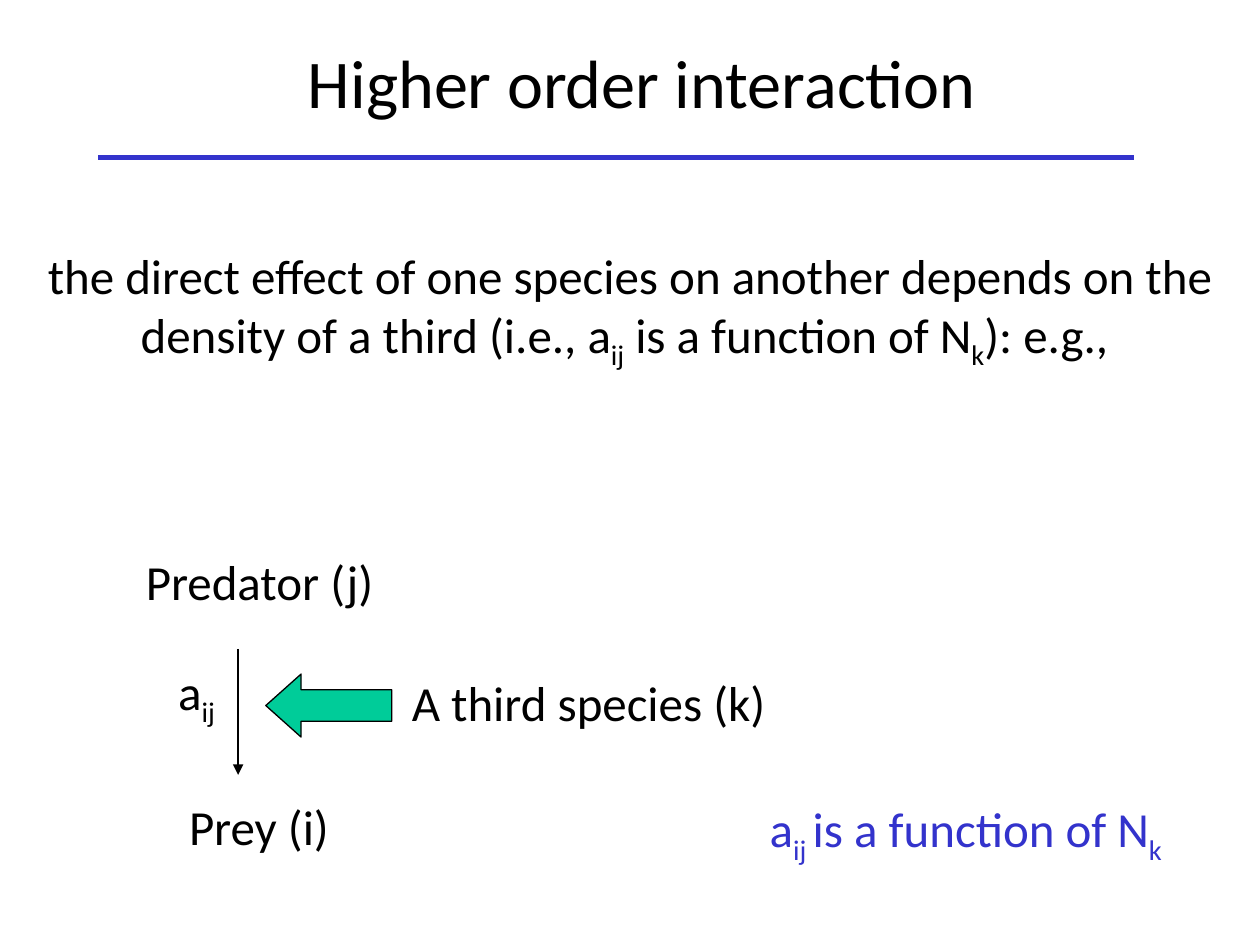
from dataclasses import dataclass

from lxml import etree
from pptx import Presentation
from pptx.dml.color import RGBColor
from pptx.enum.shapes import MSO_CONNECTOR, MSO_SHAPE
from pptx.enum.text import PP_ALIGN
from pptx.oxml.ns import qn
from pptx.util import Inches, Pt

CENTER, LEFT = PP_ALIGN.CENTER, PP_ALIGN.LEFT
LEFT_ARROW = MSO_SHAPE.LEFT_ARROW
STRAIGHT = MSO_CONNECTOR.STRAIGHT

FONT = "Calibri"
BLACK, BLUE, GREEN = "000000", "3333CC", "00CC99"
CELL = 0.1  # grid of 100 columns by 75 rows
WIDE_INSETS, NORMAL_INSETS = (0.14, 0.07), (0.1, 0.05)


@dataclass
class Label:
    """Text placed on the grid; parts between underscores are subscripts."""
    text: str
    column: float
    row: float
    columns: float
    rows: float
    size: int = 28
    color: str = BLACK
    align: PP_ALIGN = CENTER
    insets: tuple[float, float] = NORMAL_INSETS


@dataclass
class Line:
    start: tuple[float, float]
    end: tuple[float, float]
    color: str
    width: float
    arrow: bool = False


LABELS = [
    Label("Higher order interaction", 0, 2.5, 101.9, 8, size=39, insets=WIDE_INSETS),
    Label("the direct effect of one species on another depends on the density "
          "of a third (i.e., a_ij_ is a function of N_k_): e.g., ",
          0, 18.8, 100, 15.6, insets=WIDE_INSETS),
    Label("Prey (i)", 10, 62.7, 21.1, 5.7),
    Label("Predator (j)", 5.6, 43.3, 30, 5.7),
    Label("A third species (k)", 31.7, 52.9, 43.3, 5.7, align=LEFT),
    Label("a_ij_", 11.7, 52, 7.8, 5.7),
    Label("a_ij _is a function of N_k_", 53.3, 62.7, 46.7, 6.1,
          color=BLUE, insets=WIDE_INSETS),
]
LINES = [
    Line((7.8, 12.5), (90, 12.5), BLUE, 3),
    Line((18.9, 51.5), (18.9, 61.5), BLACK, 0.75, arrow=True),
]


def grid(cells: float) -> int:
    return Inches(cells * CELL)


def rgb(color: str) -> RGBColor:
    return RGBColor.from_string(color)


def add_label(slide, label: Label) -> None:
    box = slide.shapes.add_textbox(grid(label.column), grid(label.row),
                                   grid(label.columns), grid(label.rows))
    frame = box.text_frame
    frame.word_wrap = True
    horizontal, vertical = label.insets
    frame.margin_left = frame.margin_right = Inches(horizontal)
    frame.margin_top = frame.margin_bottom = Inches(vertical)
    paragraph = frame.paragraphs[0]
    paragraph.alignment = label.align
    paragraph.font.name = FONT
    paragraph.font.size = Pt(label.size)
    paragraph.font.color.rgb = rgb(label.color)
    for index, part in enumerate(label.text.split("_")):
        if part:
            run = paragraph.add_run()
            run.text = part
            if index % 2:
                run._r.get_or_add_rPr().set("baseline", "-25000")


def add_line(slide, line: Line) -> None:
    connector = slide.shapes.add_connector(
        STRAIGHT, *map(grid, line.start), *map(grid, line.end))
    connector.line.color.rgb = rgb(line.color)
    connector.line.width = Pt(line.width)
    if line.arrow:
        outline = connector.line._get_or_add_ln()
        etree.SubElement(outline, qn("a:tailEnd"), type="triangle")
    etree.SubElement(connector._element.spPr, qn("a:effectLst"))


def add_influence_arrow(slide) -> None:
    arrow = slide.shapes.add_shape(LEFT_ARROW, grid(21.1), grid(53.5), grid(10), grid(5))
    arrow.adjustments[0] = 0.5
    arrow.adjustments[1] = 0.56
    arrow.shadow.inherit = False
    arrow.fill.solid()
    arrow.fill.fore_color.rgb = rgb(GREEN)
    arrow.line.color.rgb = rgb(BLACK)
    arrow.line.width = Pt(0.75)


def main() -> None:
    presentation = Presentation()
    presentation.slide_width = grid(100)
    presentation.slide_height = grid(75)
    slide = presentation.slides.add_slide(presentation.slide_layouts[6])

    # Title rule and predation arrow
    for line in LINES:
        add_line(slide, line)
    # Title, definition and diagram labels
    for label in LABELS:
        add_label(slide, label)
    # Effect of the third species
    add_influence_arrow(slide)

    presentation.save("out.pptx")


if __name__ == "__main__":
    main()
